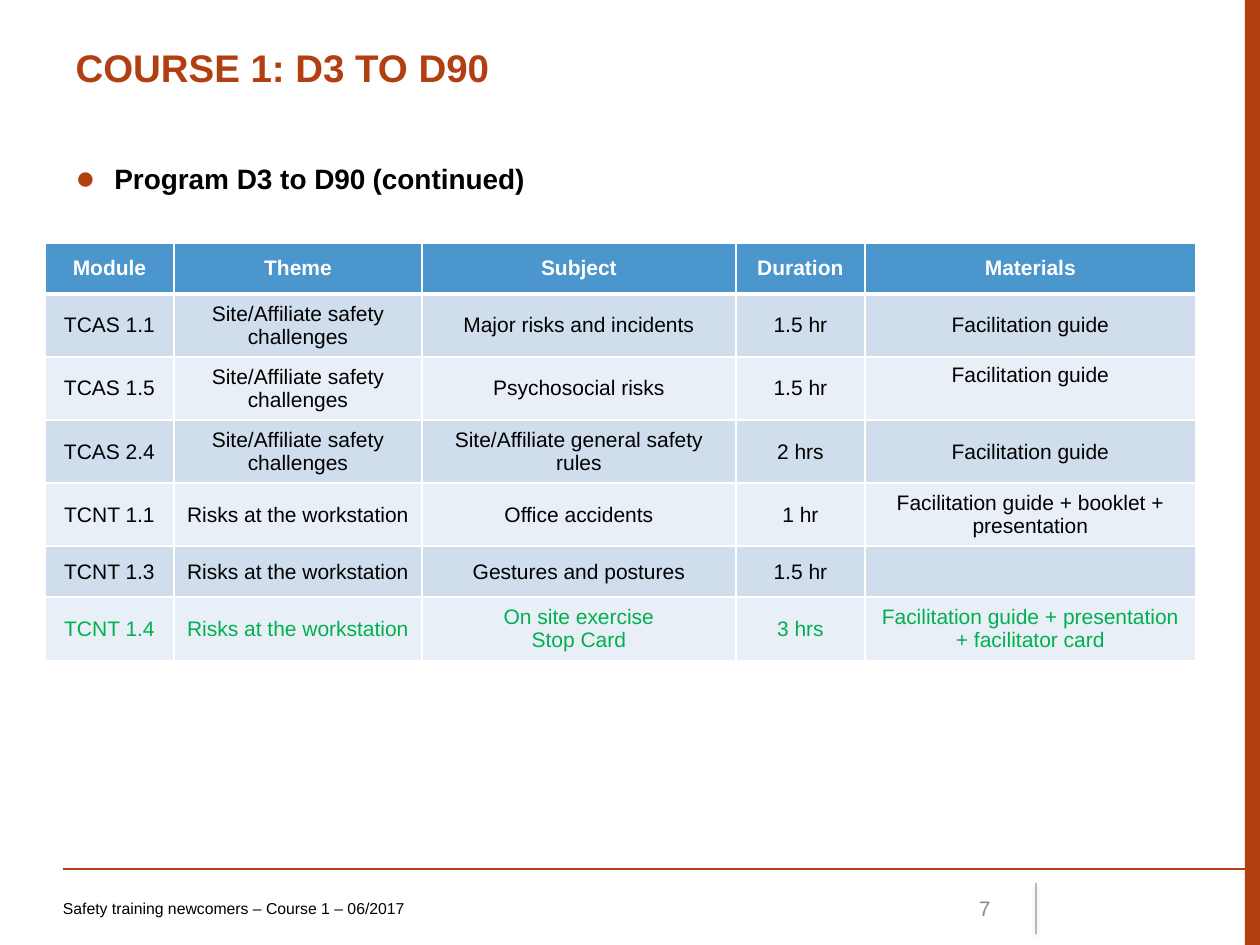
from lxml import etree
from pptx import Presentation, util as u
from pptx.dml.color import RGBColor
from pptx.enum import shapes, text
from pptx.oxml import parse_xml
from pptx.oxml.ns import nsdecls, qn

RUST = RGBColor(0xB2, 0x3F, 0x12)
BLACK = RGBColor(0, 0, 0)
WHITE = RGBColor(0xFF, 0xFF, 0xFF)
GRAY = RGBColor(0x8C, 0x8C, 0x8C)
GREEN = RGBColor(0, 0xB0, 0x50)
HEADER = RGBColor(0x4A, 0x96, 0xCD)
BANDS = [RGBColor(0xD0, 0xDD, 0xED), RGBColor(0xE9, 0xEF, 0xF6)]

TITLE = "COURSE 1: D3 TO D90"
HEADING = [("Program D3 to D90", 16), (" ", 14), ("(continued)", 16)]
FOOTER = "Safety training newcomers – Course 1 – 06/2017"
PAGE = "7"
CHALLENGES = "Site/Affiliate safety challenges"
WORKSTATION = "Risks at the workstation"
GUIDE = "Facilitation guide"
ROWS = [
    ("Module", "Theme", "Subject", "Duration", "Materials"),
    ("TCAS 1.1", CHALLENGES, "Major risks and incidents", "1.5 hr", GUIDE),
    ("TCAS 1.5", CHALLENGES, "Psychosocial risks", "1.5 hr", GUIDE),
    ("TCAS 2.4", CHALLENGES, "Site/Affiliate general safety rules", "2 hrs", GUIDE),
    ("TCNT 1.1", WORKSTATION, "Office accidents", "1 hr",
     "Facilitation guide + booklet + presentation"),
    ("TCNT 1.3", WORKSTATION, "Gestures and postures", "1.5 hr", ""),
    ("TCNT 1.4", WORKSTATION, "On site exercise\nStop Card", "3 hrs",
     "Facilitation guide + presentation + facilitator card"),
]
COL_WIDTHS = [129, 248, 314, 129, 331]
ROW_HEIGHTS = [51, 60, 60, 60, 60, 51, 60]
TOP_CELL = (2, 4)


def px(n):
    return u.Emu(round(n * 914400 / 126))


def box(*lengths):
    return [px(n) for n in lengths]


def style(p, size, color, bold=False):
    for r in p.runs:
        r.font.name = "Arial"
        r.font.size = u.Pt(size)
        r.font.bold = bold
        r.font.color.rgb = color


def add_text(s, place, anchor=text.MSO_ANCHOR.TOP):
    tf = s.shapes.add_textbox(*box(*place)).text_frame
    tf.word_wrap = True
    tf.vertical_anchor = anchor
    return tf


def add_line(s, ends, color, width):
    line = s.shapes.add_connector(shapes.MSO_CONNECTOR.STRAIGHT, *box(*ends))
    line.line.color.rgb = color
    line.line.width = u.Pt(width)
    effects = etree.SubElement(line._element.spPr, qn("a:effectLst"))
    return line, effects


def add_borders(cell, widths):
    tc_pr = cell._tc.get_or_add_tcPr()
    for side, width in zip("LRTB", widths):
        tc_pr.append(parse_xml(
            f'<a:ln{side} {nsdecls("a")} w="{u.Pt(width)}"><a:solidFill>'
            f'<a:srgbClr val="{WHITE}"/></a:solidFill></a:ln{side}>'))


def add_frame(s):
    bar = s.shapes.add_shape(shapes.MSO_SHAPE.RECTANGLE, *box(1245, 0, 15, 945))
    bar.shadow.inherit = False
    bar.fill.solid()
    bar.fill.fore_color.rgb = RUST
    bar.line.fill.background()
    add_line(s, (63, 869, 1260, 869), RUST, 0.75)
    divider, effects = add_line(s, (1036, 883, 1036, 934), BLACK, 0.5)
    color = divider.line._ln.find(".//" + qn("a:srgbClr"))
    etree.SubElement(color, qn("a:alpha"), val="70000")
    effects.append(parse_xml(
        f'<a:outerShdw {nsdecls("a")} blurRad="{u.Pt(3.1)}" dist="{u.Pt(1.6)}" '
        'dir="5400000" rotWithShape="0"><a:srgbClr val="000000">'
        '<a:alpha val="38000"/></a:srgbClr></a:outerShdw>'))


def add_title(s):
    title = s.shapes.title
    title.left, title.top, title.width, title.height = box(63, 38, 1133, 87)
    tf = title.text_frame
    tf.text = TITLE
    tf.vertical_anchor = text.MSO_ANCHOR.TOP
    tf.paragraphs[0].alignment = text.PP_ALIGN.LEFT
    style(tf.paragraphs[0], 22, RUST, True)


def add_heading(s):
    p = add_text(s, (63, 155, 1133, 59)).paragraphs[0]
    p.space_before = u.Pt(3)
    p.space_after = u.Pt(3)
    p_pr = p._p.get_or_add_pPr()
    p_pr.set("marL", str(px(39)))
    p_pr.set("indent", str(-px(39)))
    color = etree.SubElement(p_pr, qn("a:buClr"))
    etree.SubElement(color, qn("a:srgbClr"), val=str(RUST))
    etree.SubElement(p_pr, qn("a:buSzPct"), val="120000")
    etree.SubElement(p_pr, qn("a:buFont"), typeface="Arial")
    etree.SubElement(p_pr, qn("a:buChar"), char="●")
    for words, _ in HEADING:
        p.add_run().text = words
    style(p, 16, BLACK, True)
    for r, (_, size) in zip(p.runs, HEADING):
        r.font.size = u.Pt(size)


def add_footer(s):
    tf = add_text(s, (63, 883, 766, 51), text.MSO_ANCHOR.MIDDLE)
    tf.margin_left = 0
    tf.text = FOOTER
    style(tf.paragraphs[0], 9, BLACK)
    tf = add_text(s, (903, 883, 100, 51), text.MSO_ANCHOR.MIDDLE)
    tf.text = PAGE
    tf.paragraphs[0].alignment = text.PP_ALIGN.RIGHT
    style(tf.paragraphs[0], 12, GRAY)


def add_program(s):
    place = box(45, 243, sum(COL_WIDTHS), sum(ROW_HEIGHTS))
    table = s.shapes.add_table(len(ROWS), len(COL_WIDTHS), *place).table
    table.horz_banding = False
    for col, width in zip(table.columns, COL_WIDTHS):
        col.width = px(width)
    for i, (row, height) in enumerate(zip(ROWS, ROW_HEIGHTS)):
        table.rows[i].height = px(height)
        fill = BANDS[(i - 1) % 2] if i else HEADER
        color = WHITE if i == 0 else GREEN if i == len(ROWS) - 1 else BLACK
        for j, words in enumerate(row):
            cell = table.cell(i, j)
            add_borders(cell, (1, 1, 3 if i == 1 else 1, 3 if i == 0 else 1))
            cell.fill.solid()
            cell.fill.fore_color.rgb = fill
            cell.vertical_anchor = (text.MSO_ANCHOR.TOP if (i, j) == TOP_CELL
                                    else text.MSO_ANCHOR.MIDDLE)
            cell.text_frame.text = words
            for p in cell.text_frame.paragraphs:
                p.alignment = text.PP_ALIGN.CENTER
                style(p, 12, color, i == 0)


def main():
    prs = Presentation()
    prs.slide_width, prs.slide_height = box(1260, 945)
    s = prs.slides.add_slide(prs.slide_layouts[5])
    add_frame(s)
    add_title(s)
    add_footer(s)
    add_heading(s)
    add_program(s)
    prs.save("out.pptx")


if __name__ == "__main__":
    main()
